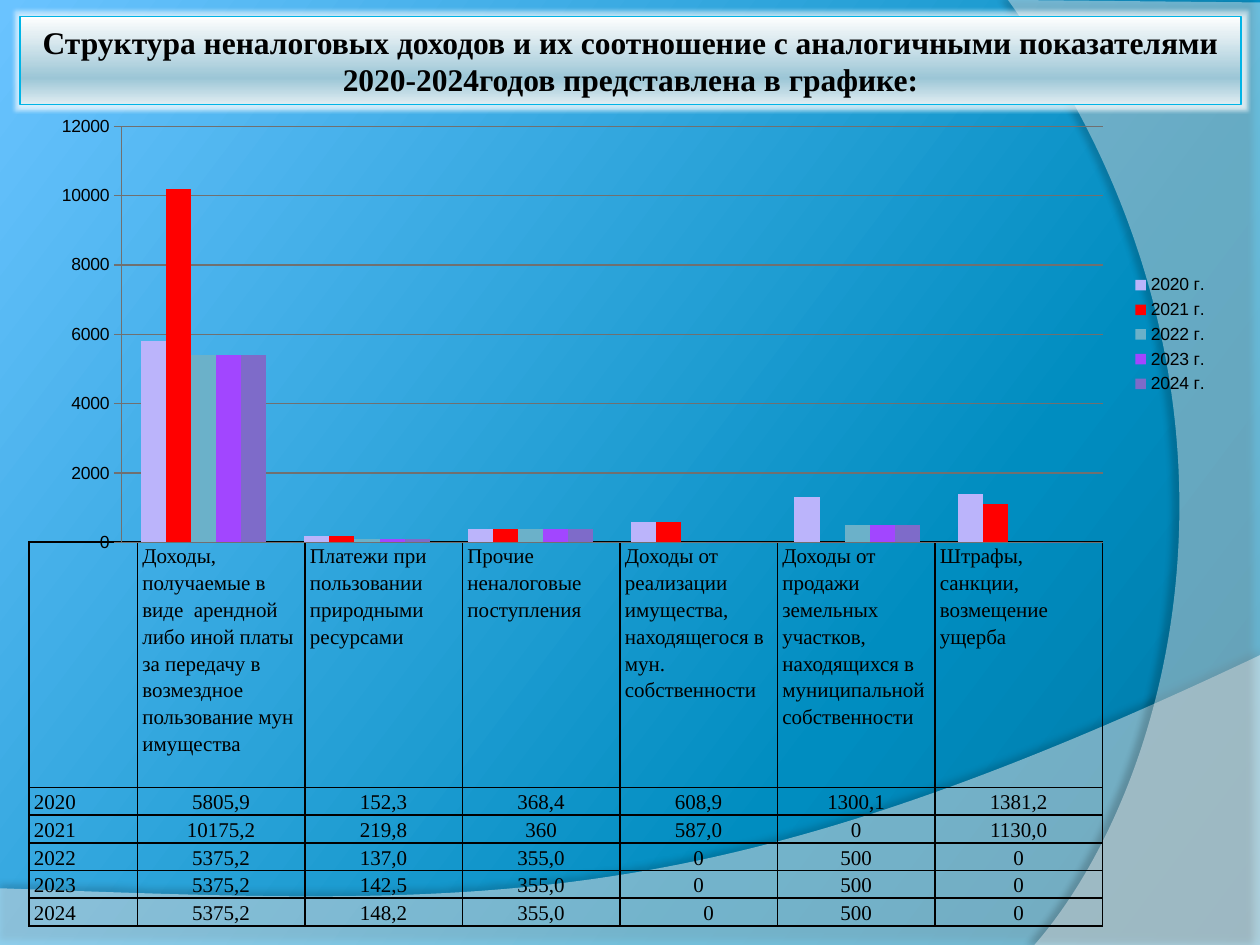
import dataclasses

import lxml.etree
import pptx
import pptx.chart.data
import pptx.dml.color
import pptx.enum.chart
import pptx.enum.shapes
import pptx.enum.text
import pptx.oxml
import pptx.oxml.ns
import pptx.util

Inches = pptx.util.Inches
Pt = pptx.util.Pt
qn = pptx.oxml.ns.qn
NAMESPACE = pptx.oxml.ns.nsdecls("a")


@dataclasses.dataclass(frozen=True)
class Theme:
    serif: str = "Times New Roman"
    sans: str = "Arial"
    text: str = "000000"
    white: str = "FFFFFF"
    frame: str = "00B4E6"
    grid: str = "707070"
    background: tuple = ((0, "0076A1"), (30, "008DC0"), (100, "6AC3FF"))
    banner: tuple = ((0, "FFFFFF"), (20, "E4EFF3"), (70, "9CC6D6"), (100, "E0EDF2"))
    series: tuple = ("BBB4FB", "FF0000", "6BB1C9", "A246FF", "7E6BC9")
    title_size: int = 18
    table_size: int = 12
    chart_size: int = 10


THEME = Theme()

TITLE = ("Структура неналоговых доходов и их соотношение с аналогичными показателями "
         "2020-2024годов представлена в графике:")
# A no-break space keeps the gap before the last word of the first heading
INCOME_KINDS = [
    "Доходы, получаемые в виде  арендной либо иной платы за передачу в возмездное "
    "пользование мун  имущества",
    "Платежи при пользовании природными ресурсами",
    "Прочие неналоговые поступления",
    "Доходы от реализации имущества, находящегося в мун. собственности",
    "Доходы от продажи земельных участков, находящихся в муниципальной собственности",
    "Штрафы, санкции, возмещение ущерба",
]
INCOME_BY_YEAR = {
    "2020": ["5805,9", "152,3", "368,4", "608,9", "1300,1", "1381,2"],
    "2021": ["10175,2", "219,8", "360", "587,0", "0", "1130,0"],
    "2022": ["5375,2", "137,0", "355,0", "0", "500", "0"],
    "2023": ["5375,2", "142,5", "355,0", "0", "500", "0"],
    "2024": ["5375,2", "148,2", "355,0", "0", "500", "0"],
}


def color(value):
    return pptx.dml.color.RGBColor.from_string(value)


def to_hundreds(text):
    return round(float(text.replace(",", ".")) / 100) * 100


def set_font(font, name, size, bold=False):
    font.name = name
    font.size = Pt(size)
    font.bold = bold
    font.color.rgb = color(THEME.text)


def set_gradient(fill, element, stops, angle):
    """Give a fill any number of (percent, colour) stops."""
    fill.gradient()
    gradient = next(element.iter(qn("a:gradFill")))
    stop_list = gradient.find(qn("a:gsLst"))
    for stop in list(stop_list):
        stop_list.remove(stop)
    for position, value in stops:
        stop_list.append(pptx.oxml.parse_xml(
            f'<a:gs {NAMESPACE} pos="{position * 1000}"><a:srgbClr val="{value}"/></a:gs>'))
    gradient.find(qn("a:lin")).set("ang", str(angle * 60000))


def add_effect(shape, effect):
    shape.element.spPr.append(pptx.oxml.parse_xml(
        f"<a:effectLst {NAMESPACE}>{effect}</a:effectLst>"))


def bend_last_side(shape, controls):
    """Turn the last straight side of a freeform into a cubic curve."""
    side = list(shape.element.iter(qn("a:lnTo")))[-1]
    side.tag = qn("a:cubicBezTo")
    for index, (x, y) in enumerate(controls):
        point = lxml.etree.Element(qn("a:pt"), x=str(Inches(x) - shape.left),
                                   y=str(Inches(y) - shape.top))
        side.insert(index, point)


def add_wave(slide, corners, controls, opacity, shadow_opacity, distance, direction):
    """Draw straight sides through the corners; the last side is curved."""
    points = [(Inches(x), Inches(y)) for x, y in corners]
    builder = slide.shapes.build_freeform(*points[0])
    builder.add_line_segments(points[1:], close=True)
    shape = builder.convert_to_shape()
    bend_last_side(shape, controls)
    shape.fill.solid()
    shape.fill.fore_color.rgb = color(THEME.white)
    lxml.etree.SubElement(next(shape.element.spPr.iter(qn("a:srgbClr"))),
                          qn("a:alpha"), val=str(opacity * 1000))
    shape.line.fill.background()
    add_effect(shape, f'<a:outerShdw blurRad="{Pt(4)}" dist="{Pt(distance)}" '
                      f'dir="{direction * 60000}" rotWithShape="0"><a:srgbClr val="000000">'
                      f'<a:alpha val="{shadow_opacity * 1000}"/></a:srgbClr></a:outerShdw>')


def add_title(slide):
    shape = slide.shapes.add_shape(pptx.enum.shapes.MSO_SHAPE.RECTANGLE,
                                   Inches(0.16), Inches(0.13), Inches(9.69), Inches(0.7))
    set_gradient(shape.fill, shape.element, THEME.banner, 90)
    shape.line.color.rgb = color(THEME.frame)
    shape.line.width = Pt(0.75)
    add_effect(shape, f'<a:glow rad="{Pt(2.5)}"><a:srgbClr val="{THEME.white}">'
                      '<a:alpha val="50000"/></a:srgbClr></a:glow>')
    frame = shape.text_frame
    frame.word_wrap = True
    frame.vertical_anchor = pptx.enum.text.MSO_ANCHOR.MIDDLE
    frame.margin_left = frame.margin_right = Inches(0.05)
    frame.margin_top = frame.margin_bottom = Inches(0.05)
    frame.text = TITLE
    paragraph = frame.paragraphs[0]
    paragraph.alignment = pptx.enum.text.PP_ALIGN.CENTER
    set_font(paragraph.runs[0].font, THEME.serif, THEME.title_size, bold=True)


def fill_cell(cell, text, centred):
    cell.margin_left = cell.margin_right = Inches(0.04)
    cell.margin_top = cell.margin_bottom = 0
    cell.fill.background()
    properties = cell._tc.get_or_add_tcPr()
    for index, side in enumerate(("lnL", "lnR", "lnT", "lnB")):
        properties.insert(index, pptx.oxml.parse_xml(
            f'<a:{side} {NAMESPACE} w="{Pt(1)}"><a:solidFill>'
            f'<a:srgbClr val="{THEME.text}"/></a:solidFill></a:{side}>'))
    cell.text_frame.text = text
    paragraph = cell.text_frame.paragraphs[0]
    paragraph.line_spacing = 1.15
    paragraph.space_after = Pt(10)
    if centred:
        paragraph.alignment = pptx.enum.text.PP_ALIGN.CENTER
    for run in paragraph.runs:
        set_font(run.font, THEME.serif, THEME.table_size)
    return paragraph


def add_income_table(slide):
    rows = [["", *INCOME_KINDS]] + [[year, *values] for year, values in INCOME_BY_YEAR.items()]
    widths = [0.86, 1.33, 1.25, 1.25, 1.25, 1.25, 1.33]
    heights = [1.95] + [0.22] * len(INCOME_BY_YEAR)
    table = slide.shapes.add_table(len(rows), len(widths), Inches(0.23), Inches(4.3),
                                   Inches(sum(widths)), Inches(sum(heights))).table
    table.first_row = table.horz_banding = False
    for column, width in zip(table.columns, widths):
        column.width = Inches(width)
    for row, height in zip(table.rows, heights):
        row.height = Inches(height)
    for r, values in enumerate(rows):
        for c, text in enumerate(values):
            paragraph = fill_cell(table.cell(r, c), text, centred=r > 0 and c > 0)
            if (r, c) == (5, 4):
                paragraph._p.get_or_add_pPr().set("indent", str(Inches(0.16)))


def add_income_chart(slide):
    data = pptx.chart.data.CategoryChartData()
    data.categories = [str(number + 1) for number in range(len(INCOME_KINDS))]
    for year, values in INCOME_BY_YEAR.items():
        data.add_series(f"{year} г.", [to_hundreds(value) for value in values])
    chart = slide.shapes.add_chart(
        pptx.enum.chart.XL_CHART_TYPE.COLUMN_CLUSTERED,
        Inches(0.31), Inches(0.86), Inches(9.38), Inches(3.59), data).chart
    set_font(chart.font, THEME.sans, THEME.chart_size)
    chart.has_title = False
    chart.has_legend = True
    chart.legend.position = pptx.enum.chart.XL_LEGEND_POSITION.RIGHT
    chart.legend.include_in_layout = False

    # Columns
    plot = chart.plots[0]
    plot.vary_by_categories = False
    plot.gap_width = 150
    plot.overlap = 0
    for series, value in zip(plot.series, THEME.series):
        series.format.fill.solid()
        series.format.fill.fore_color.rgb = color(value)

    # Axes
    chart.category_axis.visible = False
    axis = chart.value_axis
    axis.minimum_scale, axis.maximum_scale, axis.major_unit = 0, 12000, 2000
    axis.major_tick_mark = pptx.enum.chart.XL_TICK_MARK.CROSS
    axis.tick_labels.number_format = "0"
    axis.tick_labels.number_format_is_linked = False
    for line in (axis.format.line, axis.major_gridlines.format.line):
        line.color.rgb = color(THEME.grid)
        line.width = Pt(0.75)

    # Plot area lined up with the table columns
    plot_area = next(chart._chartSpace.iter(qn("c:plotArea")))
    for layout in plot_area.findall(qn("c:layout")):
        plot_area.remove(layout)
    places = "".join(f'<c:{name} val="{value}"/>' for name, value in (
        ("layoutTarget", "inner"), ("xMode", "edge"), ("yMode", "edge"),
        ("x", 0.07), ("y", 0.04), ("w", 0.83), ("h", 0.92)))
    plot_area.insert(0, pptx.oxml.parse_xml(
        f'<c:layout {pptx.oxml.ns.nsdecls("c")}><c:manualLayout>{places}'
        '</c:manualLayout></c:layout>'))


def main():
    presentation = pptx.Presentation()
    presentation.slide_width, presentation.slide_height = Inches(10), Inches(7.5)
    slide = presentation.slides.add_slide(presentation.slide_layouts[6])

    # Background and its two translucent waves
    set_gradient(slide.background.fill, slide.element, THEME.background, 217)
    add_wave(slide, [(0, 7.05), (0, 7.5), (10, 7.5), (10, 5.2), (0, 7.05)],
             [(5.59, 7.29), (3.91, 7.19)], 45, 35, 3.5, 270)
    add_wave(slide, [(8, 0), (10, 0.02), (10, 7.5), (8.21, 7.5), (8, 0)],
             [(9.35, 6.19), (10.18, 3)], 40, 45, 4, 180)

    # Content
    add_title(slide)
    add_income_table(slide)
    add_income_chart(slide)
    presentation.save("out.pptx")


if __name__ == "__main__":
    main()
